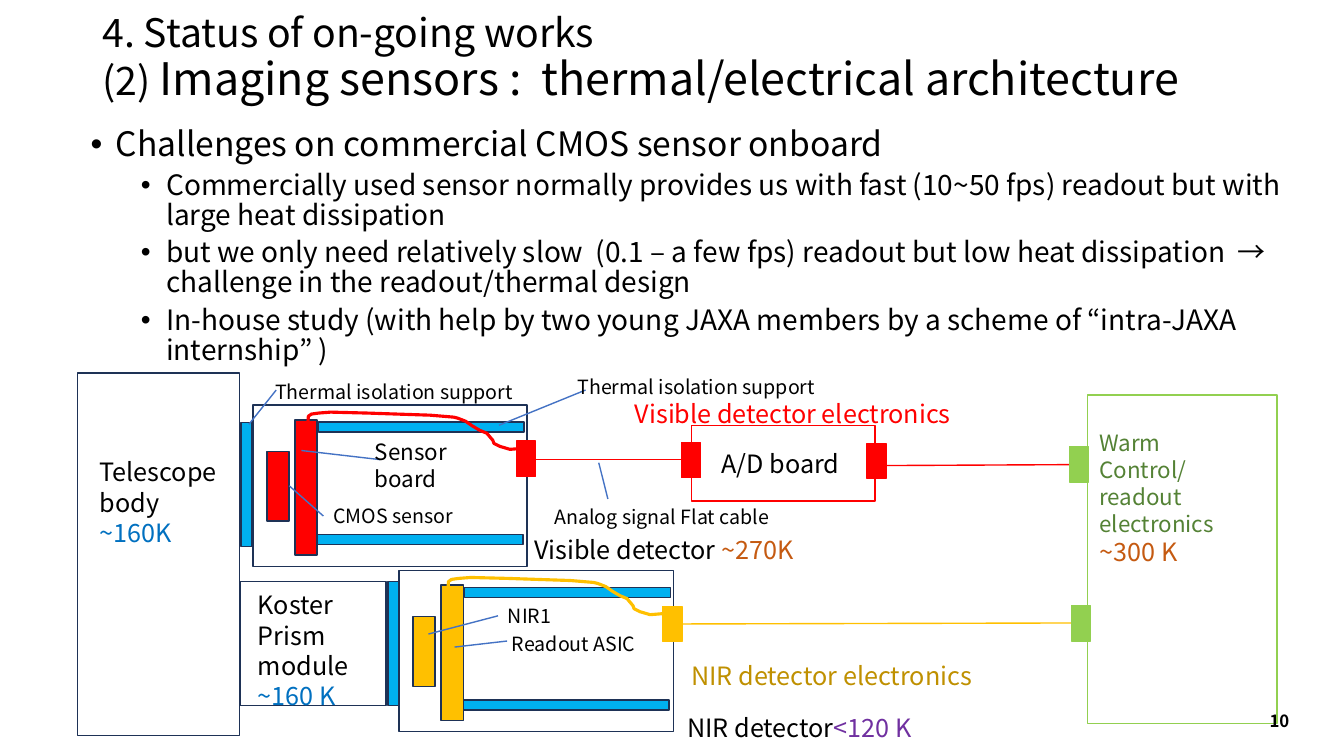
from pptx import Presentation
from pptx.dml.color import RGBColor
from pptx.enum.shapes import MSO_CONNECTOR, MSO_SHAPE
from pptx.enum.text import MSO_ANCHOR, PP_ALIGN
from pptx.oxml.ns import qn
from pptx.util import Pt
from lxml import etree

RECT, LINE = MSO_SHAPE.RECTANGLE, MSO_CONNECTOR.STRAIGHT
MID, TOP = MSO_ANCHOR.MIDDLE, MSO_ANCHOR.TOP
RIGHT = PP_ALIGN.RIGHT
FONT = "Noto Sans CJK JP"

BLACK = RGBColor(0x00, 0x00, 0x00)
NAVY = RGBColor(0x1E, 0x32, 0x56)
BLUE = RGBColor(0x44, 0x72, 0xC4)
COLD = RGBColor(0x00, 0x70, 0xC0)
SKY = RGBColor(0x00, 0xB0, 0xF0)
RED = RGBColor(0xFF, 0x00, 0x00)
AMBER = RGBColor(0xFF, 0xC0, 0x00)
GOLD = RGBColor(0xBF, 0x90, 0x00)
LIME = RGBColor(0x92, 0xD0, 0x50)
GREEN = RGBColor(0x54, 0x82, 0x35)
RUST = RGBColor(0xC5, 0x5A, 0x11)
PURPLE = RGBColor(0x70, 0x30, 0xA0)

# Cable outline, from the board to the connector
WIRE = [(2.9, 22.3), (0.7, 18), (0, 13), (0.7, 2.9), (2.9, 1.4), (7.9, 0.7),
        (16.6, 0), (43.2, 0.7), (64, 1.4), (87.8, 2.2), (104.4, 3.6),
        (107.3, 4.3), (113, 6.5), (118, 10), (123.1, 13), (128.2, 15.1),
        (132.5, 20.2), (133.2, 22.3), (137.5, 24.5), (144.7, 26.6),
        (153.4, 25.9)]

BODY = [
    "Commercially used sensor normally provides us with fast (10~50 fps) "
    "readout but with large heat dissipation",
    "but we only need relatively slow  (0.1 – a few fps) readout but low heat "
    "dissipation  → challenge in the readout/thermal design",
    "In-house study (with help by two young JAXA members by a scheme of "
    "“intra-JAXA internship” )",
]

# Callout lines: x1, y1, x2, y2
CALLS = [
    (231, 368.6, 206.6, 347), (215.3, 321.8, 271.4, 328.3),
    (356.4, 303.8, 418.3, 278.6), (197.3, 303.1, 177.8, 303.1 - 0),
    (427.7, 330.5, 434.2, 356.4), (355.7, 439.9, 306, 452.9),
    (362.2, 457.9, 324.7, 462.2),
]
CALLS[3] = (197.3, 278.6, 177.8, 303.1)

# Plain labels: x, y, width, height, size, paragraphs of (text, colour) runs
LABELS = [
    (231, 356.4, 171.4, 24.5, 14, [[("CMOS sensor", BLACK)]]),
    (260.6, 309.6, 79.9, 46, 16, [[("Sensor board", BLACK)]]),
    (508.3, 316.8, 131, 28.8, 18, [[("A/D board", BLACK)]]),
    (405.4, 264.2, 241.9, 24.5, 14, [[("Thermal isolation support", BLACK)]]),
    (189.4, 267.8, 229.7, 24.5, 14, [[("Thermal isolation support", BLACK)]]),
    (388.8, 357.1, 190.8, 24.5, 14, [[("Analog signal Flat cable", BLACK)]]),
    (64.1, 322.6, 108, 72.7, 18,
     [[("Telescope body", BLACK)], [("~160K", COLD)]]),
    (177.1, 417.6, 97.9, 94.3, 18,
     [[("Koster Prism module", BLACK)], [("~160 K", COLD)]]),
    (374.4, 378, 284.4, 28.8, 18,
     [[("Visible detector ", BLACK), ("~270K", RUST)]]),
    (355.7, 427.7, 72, 24.5, 14, [[("NIR1", BLACK)]]),
    (358.6, 447.8, 119.5, 24.5, 14, [[("Readout ASIC", BLACK)]]),
    (483.8, 505.4, 211, 28.8, 18,
     [[("NIR detector", BLACK), ("<120 K", PURPLE)]]),
    (446.4, 280.8, 241.9, 28.8, 18, [[("Visible detector electronics", RED)]]),
    (486.7, 468, 217.4, 28.8, 18, [[("NIR detector electronics", GOLD)]]),
]


def style(run, color, **fmt):
    for key, val in {"name": FONT, **fmt}.items():
        setattr(run.font, key, val)
    run.font.color.rgb = color


def add_run(para, text, size, color=BLACK, bold=False):
    run = para.add_run()
    run.text = text
    style(run, color, size=Pt(size), bold=bold)


def frame(slide, x, y, w, h, anchor=TOP):
    text = slide.shapes.add_textbox(Pt(x), Pt(y), Pt(w), Pt(h)).text_frame
    text.word_wrap = True
    text.vertical_anchor = anchor
    return text


def next_para(text, first):
    return text.paragraphs[0] if first else text.add_paragraph()


def label(slide, x, y, w, h, size, paras):
    text = frame(slide, x, y, w, h)
    for num, runs in enumerate(paras):
        para = next_para(text, num == 0)
        for words, color in runs:
            add_run(para, words, size, color)


def bullet(para, left):
    props = para._p.get_or_add_pPr()
    props.set("marL", str(Pt(left)))
    props.set("indent", str(Pt(-18)))
    font = etree.SubElement(props, qn("a:buFont"))
    font.set("typeface", "Arial")
    etree.SubElement(props, qn("a:buChar")).set("char", "•")


def box(slide, x, y, w, h, line=NAVY, fill=None):
    shape = slide.shapes.add_shape(RECT, Pt(x), Pt(y), Pt(w), Pt(h))
    shape.shadow.inherit = False
    if fill is None:
        shape.fill.background()
    else:
        shape.fill.solid()
        shape.fill.fore_color.rgb = fill
    shape.line.color.rgb = line
    shape.line.width = Pt(1)


def plug(slide, x, y, color):
    box(slide, x, y, 13.7, 25.2, color, color)


def link(slide, x1, y1, x2, y2, color=BLUE):
    line = slide.shapes.add_connector(LINE, Pt(x1), Pt(y1), Pt(x2), Pt(y2))
    line.line.color.rgb = color
    line.line.width = Pt(1)
    etree.SubElement(line._element.spPr, qn("a:effectLst"))


def wire(slide, x, y, color):
    pts = [(Pt(x + dx), Pt(y + dy)) for dx, dy in WIRE]
    pen = slide.shapes.build_freeform(*pts[0])
    pen.add_line_segments(pts[1:], close=False)
    shape = pen.convert_to_shape()
    shape.shadow.inherit = False
    shape.fill.background()
    shape.line.color.rgb = color
    shape.line.width = Pt(2.25)


def module(slide, x, y, color, lead):
    """Housing with sensor, board, two supports, cable and plug."""
    box(slide, x + 10, y + 33, 15.8, 49.7, fill=color)
    box(slide, x, y, 195.8, 115.2)
    box(slide, x + 30, y + 10.5, 15.8, 96.5, fill=color)
    box(slide, x + 46, y + 92.5, 146.9, 7.2, fill=SKY)
    box(slide, x + 46.8, y + 12, 146.9, 7.2, fill=SKY)
    wire(slide, x + lead, y + 5, color)
    plug(slide, x + 188.3, y + 25.6, color)


def heading(slide):
    para = frame(slide, 66.2, 5, 828, 74.9, MID).paragraphs[0]
    para.line_spacing = 0.9
    add_run(para, "4. Status of on-going works ", 28)
    para.add_line_break()
    add_run(para, "(2) ", 28)
    add_run(para, "Imaging sensors :  thermal/electrical architecture", 32)


def points(slide):
    text = frame(slide, 57.6, 87.8, 872.6, 165.6)
    rows = [("Challenges on commercial CMOS sensor onboard", 24, 18)]
    rows += [(words, 20, 54) for words in BODY]
    for num, (words, size, left) in enumerate(rows):
        para = next_para(text, num == 0)
        bullet(para, left)
        para.line_spacing = 0.9
        if num:
            para.space_before = Pt(5)
        add_run(para, words, size)


def main():
    deck = Presentation()
    deck.slide_width, deck.slide_height = Pt(960), Pt(540)
    slide = deck.slides.add_slide(deck.slide_layouts[6])
    heading(slide)
    points(slide)

    # Telescope, prism and their isolating walls
    box(slide, 55.4, 266.4, 115.9, 259.2)
    box(slide, 171.4, 415.4, 104.4, 88.6)
    for x, y in [(172.1, 301.7), (277.2, 415.4)]:
        box(slide, x, y, 7.9, 88.6, fill=SKY)

    # Detector modules
    module(slide, 180.7, 289.4, RED, 38.9)
    module(slide, 285.1, 407.5, AMBER, 34.6)

    # Readout chain
    link(slide, 383, 328.3, 488.2, 328.3, RED)
    plug(slide, 486.7, 316.1, RED)
    box(slide, 493.9, 303.8, 131, 54, RED)
    plug(slide, 619.2, 316.8, RED)
    link(slide, 622.1, 332.6, 763.9, 331.9, RED)
    link(slide, 487.4, 445.7, 765.4, 445, AMBER)

    # Warm electronics
    box(slide, 776.9, 282.2, 135.4, 234.7, LIME)
    plug(slide, 763.9, 319, LIME)
    plug(slide, 765.4, 432.7, LIME)
    text = frame(slide, 778.3, 303.1, 133.2, 87.1)
    warm = [("Warm", 16, GREEN), ("Control/readout electronics", 16, GREEN),
            ("~300 K", 18, RUST)]
    for num, row in enumerate(warm):
        add_run(next_para(text, num == 0), *row)

    # Callouts and labels
    for ends in CALLS:
        link(slide, *ends)
    for item in LABELS:
        label(slide, *item)

    # Page number
    para = frame(slide, 712.1, 500.4, 216, 28.8, MID).paragraphs[0]
    para.alignment = RIGHT
    add_run(para, "10", 12, bold=True)
    deck.save("out.pptx")


if __name__ == "__main__":
    main()
